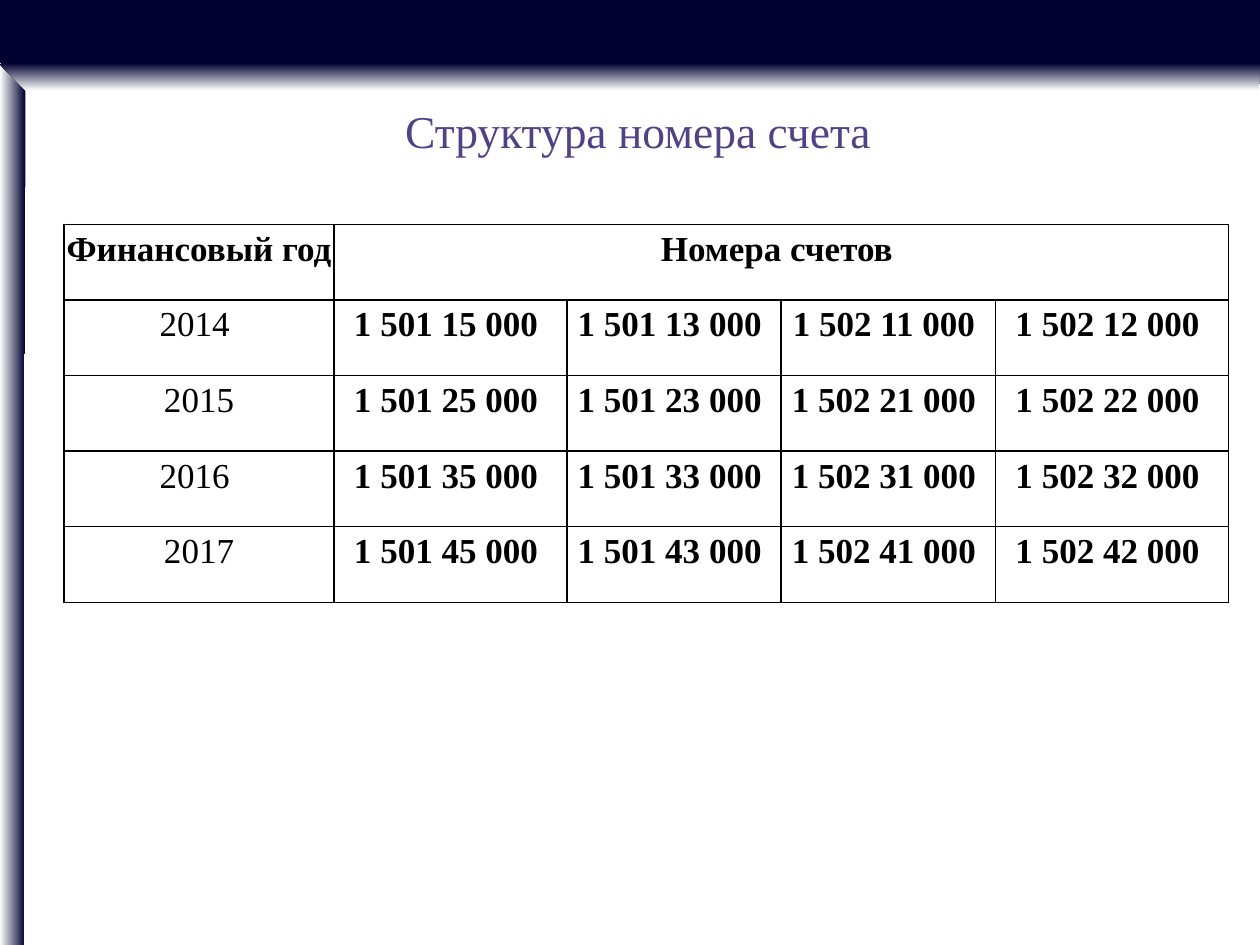
from dataclasses import dataclass

from lxml import etree
from pptx import Presentation
from pptx.dml.color import RGBColor
from pptx.enum.shapes import MSO_SHAPE
from pptx.enum.text import MSO_ANCHOR, PP_ALIGN
from pptx.oxml.ns import qn
from pptx.slide import Slide
from pptx.table import _Cell
from pptx.text.text import TextFrame
from pptx.util import Inches, Length, Pt


@dataclass(frozen=True)
class Theme:
    font: str = "Times New Roman"
    navy: str = "000030"
    white: str = "FFFFFF"
    title: str = "514185"
    ink: str = "000000"
    title_size: int = 26
    table_size: int = 20
    border_width: int = 1


@dataclass(frozen=True)
class Bevel:
    outline: tuple[tuple[float, float], ...]
    start_color: str
    end_color: str
    angle: int


@dataclass(frozen=True)
class YearAccounts:
    year: str
    accounts: tuple[str, ...]


THEME = Theme()
BEVELS = (
    Bevel(((0, 7.5), (0, 0.5), (0.2, 0.7), (0.19, 7.5)), THEME.white, THEME.navy, 0),
    Bevel(((10, 0.5), (0, 0.51), (0.21, 0.72), (9.99, 0.72)), THEME.navy, THEME.white, 270),
)
HEADINGS = ("Финансовый год ", "Номера счетов ")
YEARS = (
    YearAccounts("2014 ", ("1 501 15 000 ", "1 501 13 000 ", "1 502 11 000 ", "1 502 12 000 ")),
    YearAccounts("2015", ("1 501 25 000 ", "1 501 23 000 ", "1 502 21 000 ", "1 502 22 000 ")),
    YearAccounts("2016 ", ("1 501 35 000 ", "1 501 33 000 ", "1 502 31 000 ", "1 502 32 000 ")),
    YearAccounts("2017", ("1 501 45 000 ", "1 501 43 000 ", "1 502 41 000 ", "1 502 42 000 ")),
)
COLUMN_WIDTHS = (2.14, 1.85, 1.7, 1.7, 1.85)
ROW_HEIGHT = 0.6


def write_text(frame: TextFrame, text: str, *, size: int, color: str,
               spacing: float | Length, bold: bool = False) -> None:
    paragraph = frame.paragraphs[0]
    paragraph.alignment = PP_ALIGN.CENTER
    paragraph.line_spacing = spacing
    run = paragraph.add_run()
    run.text = text
    run.font.name = THEME.font
    run.font.size = Pt(size)
    run.font.bold = bold
    run.font.color.rgb = RGBColor.from_string(color)


def draw_banner(slide: Slide) -> None:
    banner = slide.shapes.add_shape(MSO_SHAPE.RECTANGLE, 0, 0, Inches(10), Inches(0.5))
    banner.shadow.inherit = False
    banner.fill.solid()
    banner.fill.fore_color.rgb = RGBColor.from_string(THEME.navy)
    banner.line.color.rgb = RGBColor.from_string(THEME.navy)
    banner.line.width = Pt(0.75)


def draw_bevel(slide: Slide, bevel: Bevel) -> None:
    first, *others = [(Inches(x), Inches(y)) for x, y in bevel.outline]
    builder = slide.shapes.build_freeform(*first)
    builder.add_line_segments(others, close=True)
    edge = builder.convert_to_shape()
    edge.shadow.inherit = False
    edge.line.fill.background()
    edge.fill.gradient()
    edge.fill.gradient_angle = bevel.angle
    for stop, color, position in zip(edge.fill.gradient_stops,
                                     (bevel.start_color, bevel.end_color), (0, 1)):
        stop.color.rgb = RGBColor.from_string(color)
        stop.position = position


def draw_title(slide: Slide) -> None:
    title = slide.shapes.add_textbox(Inches(0.16), Inches(0.8), Inches(9.81), Inches(0.7))
    title.text_frame.word_wrap = True
    title.text_frame.vertical_anchor = MSO_ANCHOR.MIDDLE
    title.text_frame.margin_bottom = Inches(0.13)
    write_text(title.text_frame, "Структура номера счета", size=THEME.title_size,
               color=THEME.title, spacing=Inches(0.29))


def style_cell(cell: _Cell) -> None:
    cell.margin_left = cell.margin_right = cell.margin_top = cell.margin_bottom = 0
    properties = cell._tc.get_or_add_tcPr()
    for side in ("lnL", "lnR", "lnT", "lnB"):
        border = etree.SubElement(properties, qn(f"a:{side}"), w=str(Pt(THEME.border_width)))
        fill = etree.SubElement(border, qn("a:solidFill"))
        etree.SubElement(fill, qn("a:srgbClr"), val=THEME.ink)
    cell.fill.background()


def fill_cell(cell: _Cell, text: str, bold: bool) -> None:
    write_text(cell.text_frame, text, size=THEME.table_size, color=THEME.ink,
               spacing=1.15, bold=bold)


def draw_accounts(slide: Slide) -> None:
    row_count = len(YEARS) + 1
    accounts = slide.shapes.add_table(
        row_count, len(COLUMN_WIDTHS), Inches(0.51), Inches(1.78),
        Inches(sum(COLUMN_WIDTHS)), Inches(ROW_HEIGHT * row_count)).table
    accounts.first_row = accounts.horz_banding = False
    for column, width in zip(accounts.columns, COLUMN_WIDTHS):
        column.width = Inches(width)
    for cell in accounts.iter_cells():
        style_cell(cell)
    accounts.cell(0, 1).merge(accounts.cell(0, len(COLUMN_WIDTHS) - 1))
    for column, heading in enumerate(HEADINGS):
        fill_cell(accounts.cell(0, column), heading, bold=True)
    for row, entry in enumerate(YEARS, start=1):
        for column, text in enumerate((entry.year, *entry.accounts)):
            fill_cell(accounts.cell(row, column), text, bold=column > 0)


def main() -> None:
    """Build the slide on the structure of account numbers."""
    presentation = Presentation()
    presentation.slide_width = Inches(10)
    presentation.slide_height = Inches(7.5)
    slide = presentation.slides.add_slide(presentation.slide_layouts[6])
    draw_banner(slide)
    for bevel in BEVELS:
        draw_bevel(slide, bevel)
    draw_title(slide)
    draw_accounts(slide)
    presentation.save("out.pptx")


if __name__ == "__main__":
    main()
